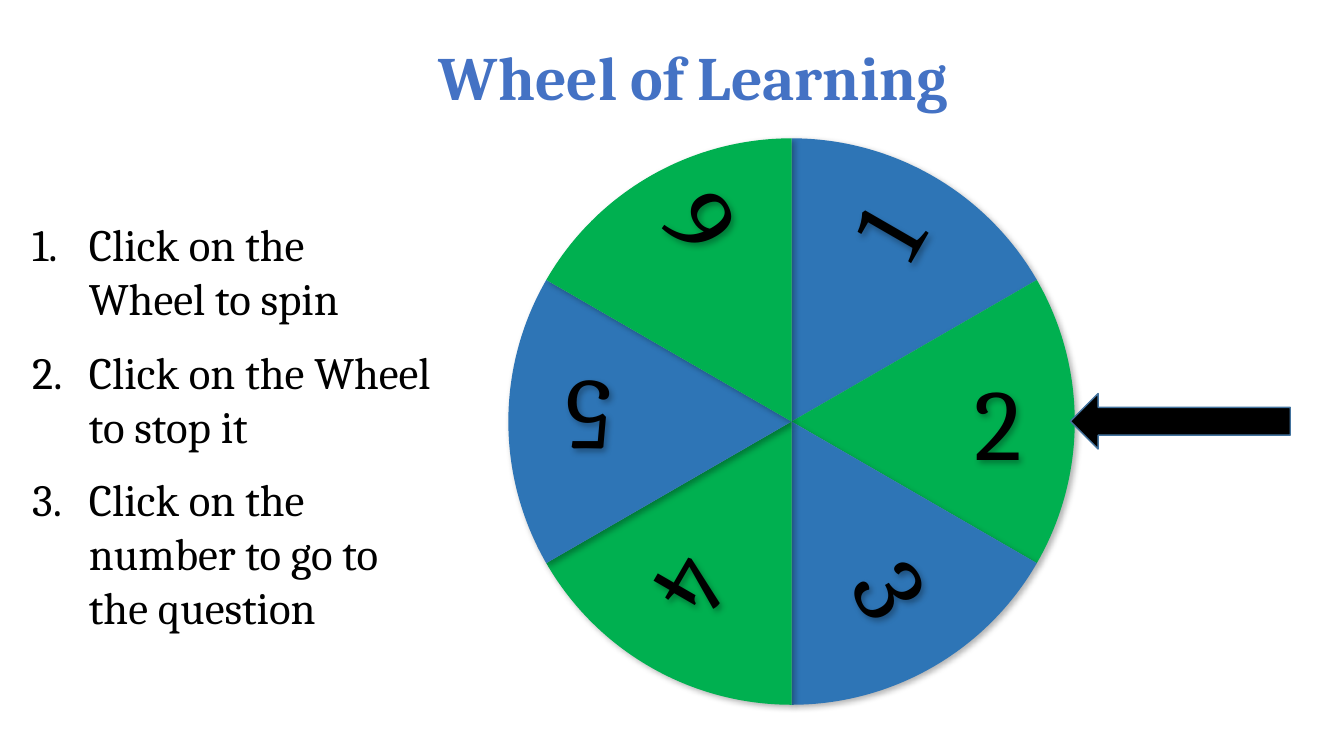
from math import cos, radians, sin, tan

from lxml import etree
from pptx import Presentation
from pptx.dml.color import RGBColor
from pptx.enum.shapes import MSO_SHAPE
from pptx.enum.text import MSO_ANCHOR, MSO_AUTO_SIZE, PP_ALIGN
from pptx.oxml import parse_xml
from pptx.oxml.ns import nsdecls, qn
from pptx.util import Pt

LEFT_ARROW = MSO_SHAPE.LEFT_ARROW
TOP, MIDDLE = MSO_ANCHOR.TOP, MSO_ANCHOR.MIDDLE
LEFT, CENTER = PP_ALIGN.LEFT, PP_ALIGN.CENTER
NO_AUTOFIT = MSO_AUTO_SIZE.NONE

COLORS = {"blue": "2E75B6", "green": "00B050", "black": "000000",
          "title": "4472C4", "arrow_line": "43739E"}
FONT = "Cambria"
HUB_X, HUB_Y, RADIUS = 565.4, 301.1, 202.3
SECTOR = 60
HANDLE = RADIUS * 4 / 3 * tan(radians(SECTOR / 4))
NUMBER_W, NUMBER_H = 144.7, 94.3
NUMBER_CENTERS = {2: (761.4, 300.6), 3: (663.5, 461.9), 4: (472.7, 461.9),
                  5: (371.9, 300.6), 1: (658.5, 119.2), 6: (471.2, 119.2)}
STEPS = ["Click on the \vWheel to spin", "Click on the Wheel to stop it",
         "Click on the number to go to the question"]
STEP_INDENT = 40.5


def rgb(name):
    return RGBColor.from_string(COLORS[name])


def set_attrs(obj, values):
    for name, value in values.items():
        setattr(obj, name, value)


def place(sp, left, top, width, height):
    set_attrs(sp, {"left": Pt(left), "top": Pt(top),
                   "width": Pt(width), "height": Pt(height)})


def format_frame(tf, anchor):
    set_attrs(tf, {"word_wrap": True, "auto_size": NO_AUTOFIT,
                   "vertical_anchor": anchor})


def write(p, text, size, color, bold=False, **layout):
    p.text = text
    set_attrs(p, layout)
    for r in p.runs:
        set_attrs(r.font, {"name": FONT, "size": Pt(size), "bold": bold})
        r.font.color.rgb = rgb(color)


def add_shadow(sp):
    sp.shadow.inherit = False
    effects = sp._element.spPr.find(qn("a:effectLst"))
    effects.append(parse_xml(
        f'<a:outerShdw {nsdecls("a")} blurRad="{Pt(4.5)}" dist="{Pt(2.6)}" '
        f'dir="{53 * 60000}" algn="tl" rotWithShape="0">'
        f'<a:srgbClr val="{COLORS["black"]}"><a:alpha val="30000"/></a:srgbClr>'
        '</a:outerShdw>'))


def number_paragraph(p):
    """Give a paragraph a hanging indent and an automatic 1. 2. 3. number."""
    pPr = p._p.get_or_add_pPr()
    pPr.set("marL", str(Pt(STEP_INDENT)))
    pPr.set("indent", str(-Pt(STEP_INDENT)))
    etree.SubElement(pPr, qn("a:buFont"), typeface="+mj-lt")
    etree.SubElement(pPr, qn("a:buAutoNum"), type="arabicPeriod")


def add_title(slide):
    title = slide.shapes.title
    place(title, 81.4, 5.4, 828, 104.4)
    format_frame(title.text_frame, MIDDLE)
    write(title.text_frame.paragraphs[0], "Wheel of Learning", 44, "title",
          bold=True, alignment=CENTER, line_spacing=0.9)


def add_steps(slide):
    body = slide.placeholders[1]
    place(body, 15.8, 151.2, 305.3, 307.4)
    tf = body.text_frame
    format_frame(tf, TOP)
    for i, step in enumerate(STEPS):
        p = tf.add_paragraph() if i else tf.paragraphs[0]
        write(p, step, 32, "black", alignment=LEFT, line_spacing=1.0,
              space_before=Pt(14.4 if i else 0), space_after=Pt(0))
        number_paragraph(p)


def rim_point(angle, handle=0):
    """Point on the rim, moved along the clockwise tangent by handle."""
    a = radians(angle)
    return (Pt(HUB_X + RADIUS * cos(a) - handle * sin(a)),
            Pt(HUB_Y + RADIUS * sin(a) + handle * cos(a)))


def curve_first_lines(sp):
    """Turn the first three line points of an outline into one Bezier curve."""
    outline = next(sp._element.iter(qn("a:path" )))
    lines = outline.findall(qn("a:lnTo"))[:3]
    curve = etree.Element(qn("a:cubicBezTo"))
    lines[0].addprevious(curve)
    for line in lines:
        curve.append(line[0])
        outline.remove(line)


def add_sector(wheel, number):
    """Draw one slice; slice 1 starts at twelve o'clock and they run clockwise."""
    start = (number - 1) * SECTOR - 90
    end = start + SECTOR
    builder = wheel.shapes.build_freeform(*rim_point(start))
    builder.add_line_segments(
        [rim_point(start, HANDLE), rim_point(end, -HANDLE), rim_point(end),
         (Pt(HUB_X), Pt(HUB_Y)), rim_point(start)], close=True)
    sp = builder.convert_to_shape()
    curve_first_lines(sp)
    sp.fill.solid()
    sp.fill.fore_color.rgb = rgb("blue" if number % 2 else "green")
    sp.line.fill.background()
    add_shadow(sp)


def add_number(wheel, number, center_x, center_y):
    sp = wheel.shapes.add_textbox(0, 0, 0, 0)
    place(sp, center_x - NUMBER_W / 2, center_y - NUMBER_H / 2,
          NUMBER_W, NUMBER_H)
    sp.rotation = (number - 2) * SECTOR % 360
    format_frame(sp.text_frame, TOP)
    write(sp.text_frame.paragraphs[0], str(number), 72, "black")
    add_shadow(sp)


def add_wheel(slide):
    wheel = slide.shapes.add_group_shape()
    for number in sorted(NUMBER_CENTERS):
        add_sector(wheel, number)
    for number, center in NUMBER_CENTERS.items():
        add_number(wheel, number, *center)


def add_pointer(slide):
    sp = slide.shapes.add_shape(LEFT_ARROW, Pt(764.6), Pt(281.1),
                                Pt(157), Pt(39.6))
    sp.shadow.inherit = False
    sp.fill.solid()
    sp.fill.fore_color.rgb = rgb("black")
    sp.line.color.rgb = rgb("arrow_line")
    sp.line.width = Pt(1)


def main():
    prs = Presentation()
    set_attrs(prs, {"slide_width": Pt(960), "slide_height": Pt(540)})
    slide = prs.slides.add_slide(prs.slide_layouts[1])
    add_wheel(slide)
    add_pointer(slide)
    add_steps(slide)
    add_title(slide)
    prs.save("out.pptx")


if __name__ == "__main__":
    main()
